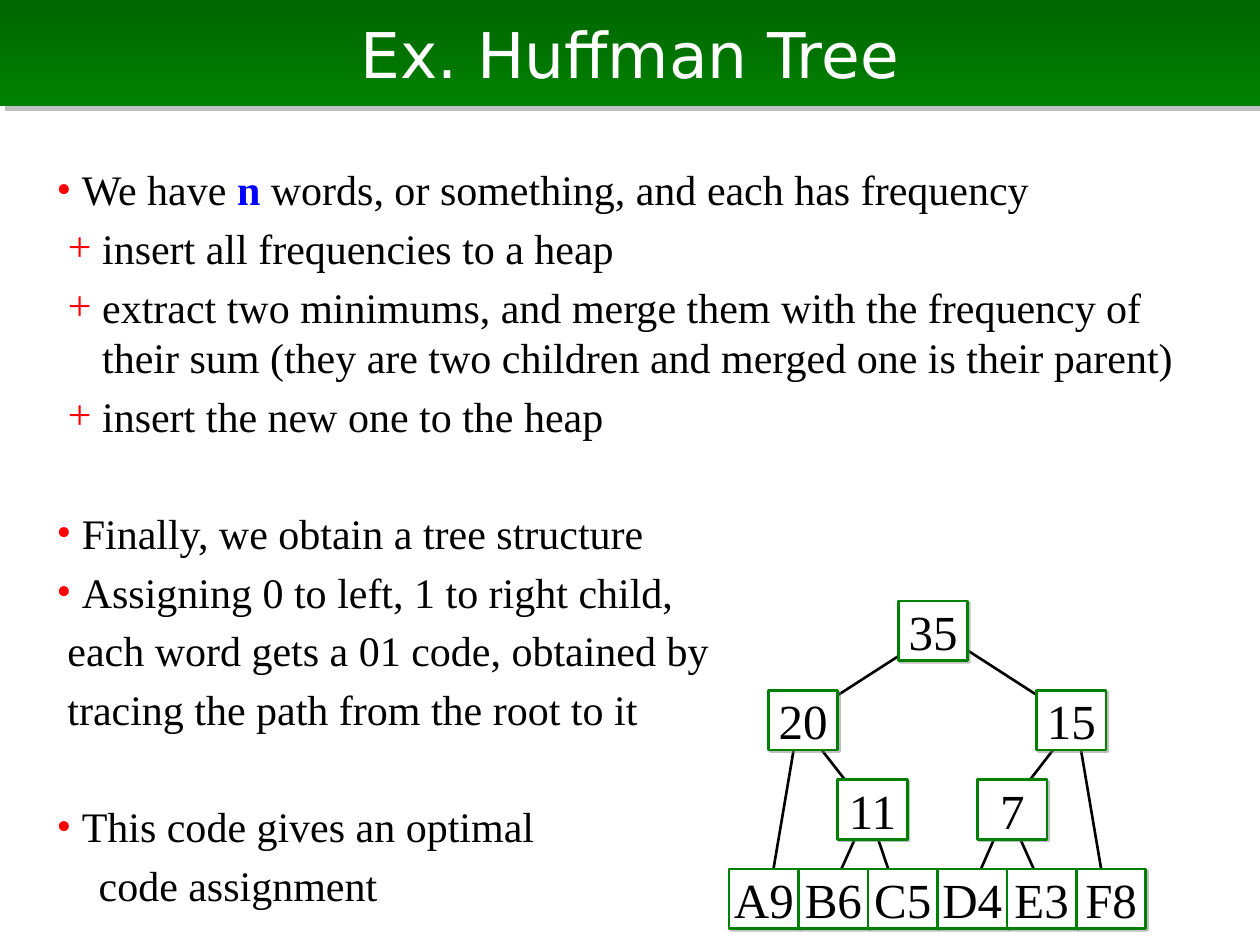
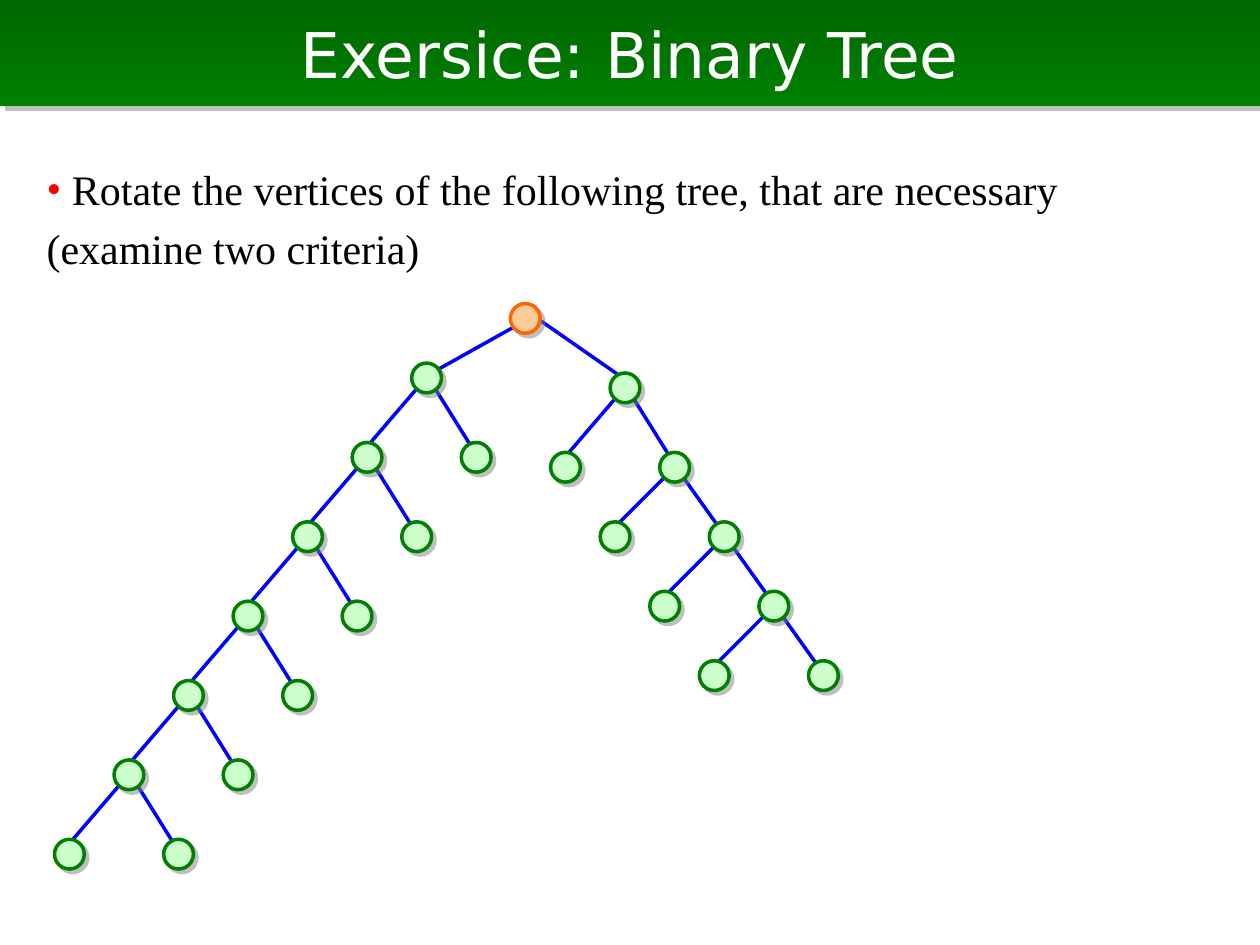
from lxml import etree
from pptx import Presentation
from pptx.dml.color import RGBColor
from pptx.enum import shapes, text
from pptx.oxml.ns import qn
from pptx.util import Cm, Pt

WHITE = RGBColor(0xFF, 0xFF, 0xFF)
BLACK = RGBColor(0x00, 0x00, 0x00)
RED = RGBColor(0xFF, 0x00, 0x00)
BLUE = RGBColor(0x00, 0x00, 0xFF)
GREEN = RGBColor(0x00, 0x80, 0x00)
DARK_GREEN = RGBColor(0x00, 0x66, 0x00)
PALE_GREEN = RGBColor(0xCC, 0xFF, 0xCC)
ORANGE = RGBColor(0xFF, 0x66, 0x00)
PALE_ORANGE = RGBColor(0xFF, 0xCC, 0x99)
GREY = RGBColor(0x80, 0x80, 0x80)
TITLE_FONT = "DejaVu Sans"
BODY_FONT = "Times New Roman"


def set_shadow(shape, distance=0):
    """Replace the theme shadow by a hard one, or by none at distance 0."""
    effects = etree.SubElement(shape._element.spPr, qn("a:effectLst"))
    if distance:
        outer = etree.SubElement(effects, qn("a:outerShdw"), blurRad="0",
                                 dist=str(Pt(distance)), dir="2700000", algn="ctr")
        colour = etree.SubElement(outer, qn("a:srgbClr"), val=str(GREY))
        etree.SubElement(colour, qn("a:alpha"), val="50000")


def draw_edge(slide, start, end, colour, width):
    edge = slide.shapes.add_connector(
        shapes.MSO_CONNECTOR.STRAIGHT, *(Cm(v) for v in (*start, *end)))
    edge.line.color.rgb = colour
    edge.line.width = Pt(width)
    set_shadow(edge)


# Line styles: bullet sign, left margin and first-line indent in cm
LINE_STYLES = {
    "point": ("•", 0.51, -0.51),
    "step": ("+", 0.92, -0.69),
    "more": (None, 0.22, 0),
    "deep": (None, 0.85, 0),
    "flush": (None, 0, 0),
}
LINE_PITCH = 29
LINE_GAP = 4.5
SECTION_GAP = 38

# Title, left edge of the body, lines as (style, gap before, words);
# words between bars are emphasised
CONTENTS = [
    ("Ex. Huffman Tree", 0.89, [
        ("point", 0, "We have |n| words, or something, and each has frequency"),
        ("step", LINE_GAP, "insert all frequencies to a heap"),
        ("step", LINE_GAP, "extract two minimums, and merge them with the frequency of "
                           "their sum (they are two children and merged one is their parent)"),
        ("step", LINE_GAP, "insert the new one to the heap"),
        ("point", SECTION_GAP, "Finally, we obtain a tree structure"),
        ("point", LINE_GAP, "Assigning 0 to left, 1 to right child,"),
        ("more", LINE_GAP, "each word gets a 01 code, obtained by"),
        ("more", LINE_GAP, "tracing the path from the root to it"),
        ("point", SECTION_GAP, "This code gives an optimal"),
        ("deep", LINE_GAP, "code assignment"),
    ]),
    ("Exersice: Binary Tree", 0.69, [
        ("point", 0, "Rotate the vertices of the following tree, that are necessary"),
        ("flush", LINE_GAP, "(examine two criteria)"),
    ]),
]

deck = Presentation()
deck.slide_width, deck.slide_height = Cm(25.4), Cm(19.05)
title_only = deck.slide_layouts[5]
TITLE_BAND = {"left": Cm(0), "top": Cm(0), "width": Cm(25.4), "height": Cm(2.13)}
TITLE_FORMAT = {"name": TITLE_FONT, "size": Pt(36), "bold": False}
BODY_FORMAT = {"name": BODY_FONT, "size": Pt(24)}

for heading, body_left, lines in CONTENTS:
    slide = deck.slides.add_slide(title_only)
    title = slide.shapes.title
    for key, value in TITLE_BAND.items():
        setattr(title, key, value)
    title.fill.gradient()
    title.fill.gradient_angle = 270
    for stop, colour in zip(title.fill.gradient_stops, (DARK_GREEN, GREEN)):
        stop.color.rgb = colour
    set_shadow(title, 4.2)
    title.text_frame.text = heading
    title.text_frame.auto_size = text.MSO_AUTO_SIZE.NONE
    title.text_frame.vertical_anchor = text.MSO_ANCHOR.MIDDLE
    heading_line = title.text_frame.paragraphs[0]
    heading_line.alignment = text.PP_ALIGN.CENTER
    heading_font = heading_line.runs[0].font
    for key, value in TITLE_FORMAT.items():
        setattr(heading_font, key, value)
    heading_font.color.rgb = WHITE

    body_height = 1.2 * len(lines) + 1.6
    body = slide.shapes.add_textbox(Cm(body_left), Cm(3.17), Cm(23.4), Cm(body_height))
    frame = body.text_frame
    frame.word_wrap = True
    for number, (style, gap, words) in enumerate(lines):
        line = frame.add_paragraph() if number else frame.paragraphs[0]
        line.line_spacing = Pt(LINE_PITCH)
        line.space_before = Pt(gap)
        sign, margin, indent = LINE_STYLES[style]
        properties = line._p.get_or_add_pPr()
        properties.set("marL", str(Cm(margin)))
        properties.set("indent", str(Cm(indent)))
        if sign:
            sign_colour = etree.SubElement(properties, qn("a:buClr"))
            etree.SubElement(sign_colour, qn("a:srgbClr"), val=str(RED))
            etree.SubElement(properties, qn("a:buFont"), typeface=BODY_FONT)
            etree.SubElement(properties, qn("a:buChar"), char=sign)
        for part, phrase in enumerate(words.split("|")):
            emphasised = part % 2 == 1
            run = line.add_run()
            run.text = phrase
            for key, value in BODY_FORMAT.items():
                setattr(run.font, key, value)
            run.font.bold = emphasised
            run.font.color.rgb = BLUE if emphasised else BLACK

huffman_slide, binary_slide = deck.slides

# Huffman tree: label -> (parent, row, left edge, x where edges meet), in cm
BOX_WIDTH, BOX_HEIGHT = 1.4, 1.2
TREE_TOP, ROW_PITCH = 12.12, 1.8
LEAF_LEFT = 14.7
huffman_nodes = {
    "35": (None, 0, 18.11, 18.9),
    "20": ("35", 1, 15.49, 16.1),
    "15": ("35", 1, 20.9, 21.69),
    "11": ("20", 2, 16.89, 17.5),
    "7": ("15", 2, 19.71, 20.3),
}
leaves = [("A9", "20", 15.49), ("B6", "11", 16.69), ("C5", "11", 18.11),
          ("D4", "7", 19.51), ("E3", "7", 21.11), ("F8", "15", 22.3)]
for column, (label, parent, joint) in enumerate(leaves):
    huffman_nodes[label] = (parent, 3, LEAF_LEFT + column * BOX_WIDTH, joint)

joints = {label: (joint, TREE_TOP + row * ROW_PITCH + BOX_HEIGHT / 2)
          for label, (parent, row, left, joint) in huffman_nodes.items()}
for label, (parent, *place) in huffman_nodes.items():
    if parent:
        draw_edge(huffman_slide, joints[parent], joints[label], BLACK, 1.5)

for label, (parent, row, left, joint) in huffman_nodes.items():
    box = huffman_slide.shapes.add_shape(
        shapes.MSO_SHAPE.RECTANGLE, Cm(left), Cm(TREE_TOP + row * ROW_PITCH),
        Cm(BOX_WIDTH), Cm(BOX_HEIGHT))
    box.fill.solid()
    box.fill.fore_color.rgb = WHITE
    box.line.color.rgb = GREEN
    box.line.width = Pt(1.5)
    set_shadow(box, 1.4)
    box.text_frame.word_wrap = False
    box.text_frame.vertical_anchor = text.MSO_ANCHOR.MIDDLE
    box.text_frame.text = label
    caption = box.text_frame.paragraphs[0]
    caption.alignment = text.PP_ALIGN.CENTER
    caption.font.name = BODY_FONT
    caption.font.size = Pt(28)
    caption.font.color.rgb = BLACK

# Binary tree: two chains of vertices, each with a sibling beside the next one
VERTEX = 0.6
SIBLING_GAP = 2.2
NEAR, FAR = 0.2, 0.4
root = (10.29, 6.12)
left_chain = [(8.3 - 1.2 * k, 7.32 + 1.6 * k) for k in range(7)]
right_chain = [(12.3, 7.52)] + [(12.3 + k, 7.72 + 1.4 * k) for k in range(1, 5)]

# Edges as (parent, child, offset in parent, offset in child)
edges = [(root, left_chain[0], (NEAR, FAR), (FAR, NEAR)),
         (root, right_chain[0], (FAR, NEAR), (FAR, NEAR))]
vertices = [root, left_chain[0], right_chain[0]]
for chain, left_shift, right_shift in ((left_chain, 0, SIBLING_GAP),
                                       (right_chain, -SIBLING_GAP, 0)):
    for parent, (x, y) in zip(chain, chain[1:]):
        left_child, right_child = (x + left_shift, y), (x + right_shift, y)
        edges.append((parent, left_child, (NEAR, FAR), (NEAR, NEAR)))
        edges.append((parent, right_child, (FAR, FAR), (FAR, FAR)))
        vertices += [left_child, right_child]

for parent, child, parent_offset, child_offset in edges:
    start = [a + b for a, b in zip(child, child_offset)]
    end = [a + b for a, b in zip(parent, parent_offset)]
    draw_edge(binary_slide, start, end, BLUE, 2)

for x, y in vertices:
    vertex = binary_slide.shapes.add_shape(
        shapes.MSO_SHAPE.OVAL, Cm(x), Cm(y), Cm(VERTEX), Cm(VERTEX))
    is_root = (x, y) == root
    vertex.fill.solid()
    vertex.fill.fore_color.rgb = PALE_ORANGE if is_root else PALE_GREEN
    vertex.line.color.rgb = ORANGE if is_root else GREEN
    vertex.line.width = Pt(2)
    set_shadow(vertex, 2.8)

deck.save("out.pptx")
